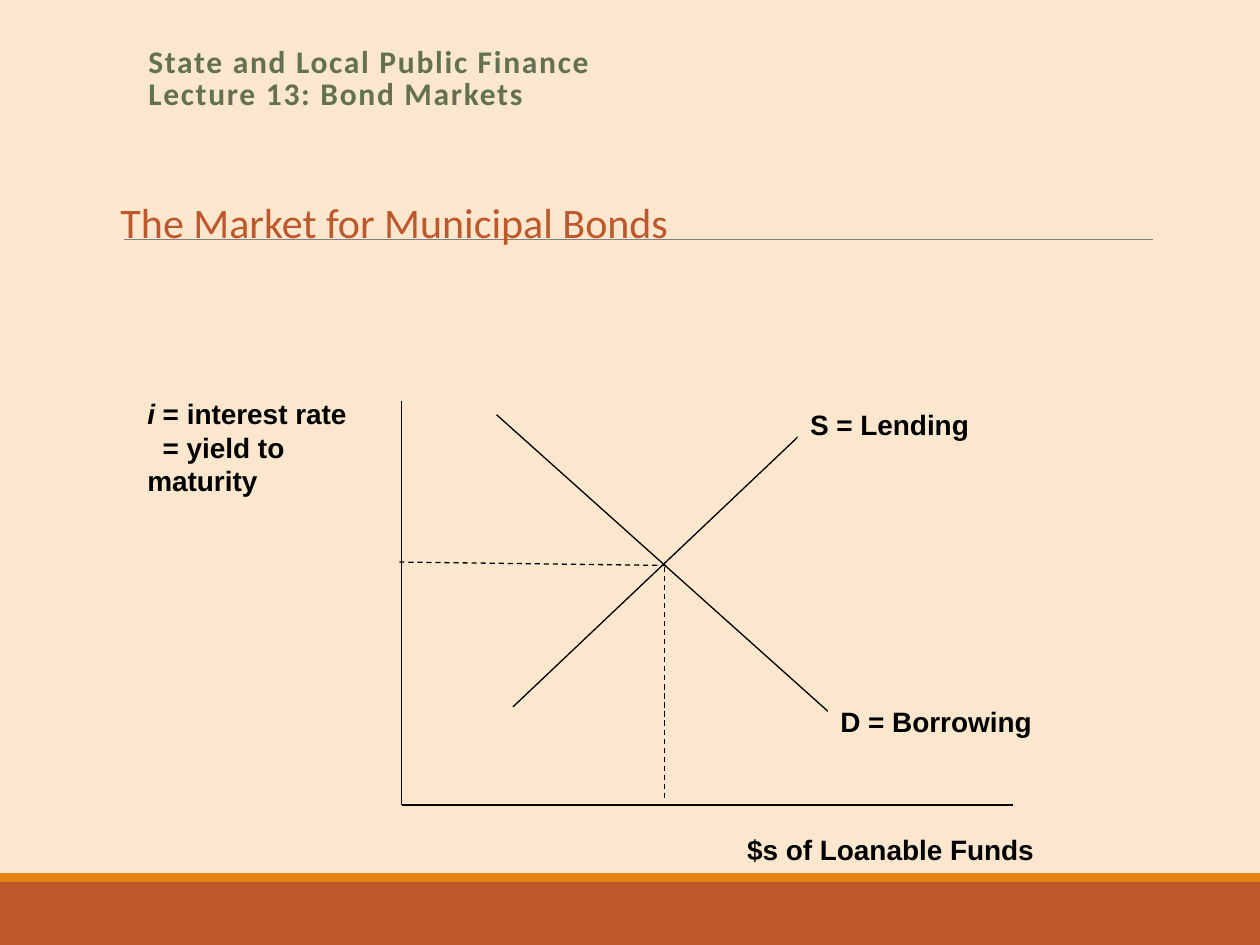
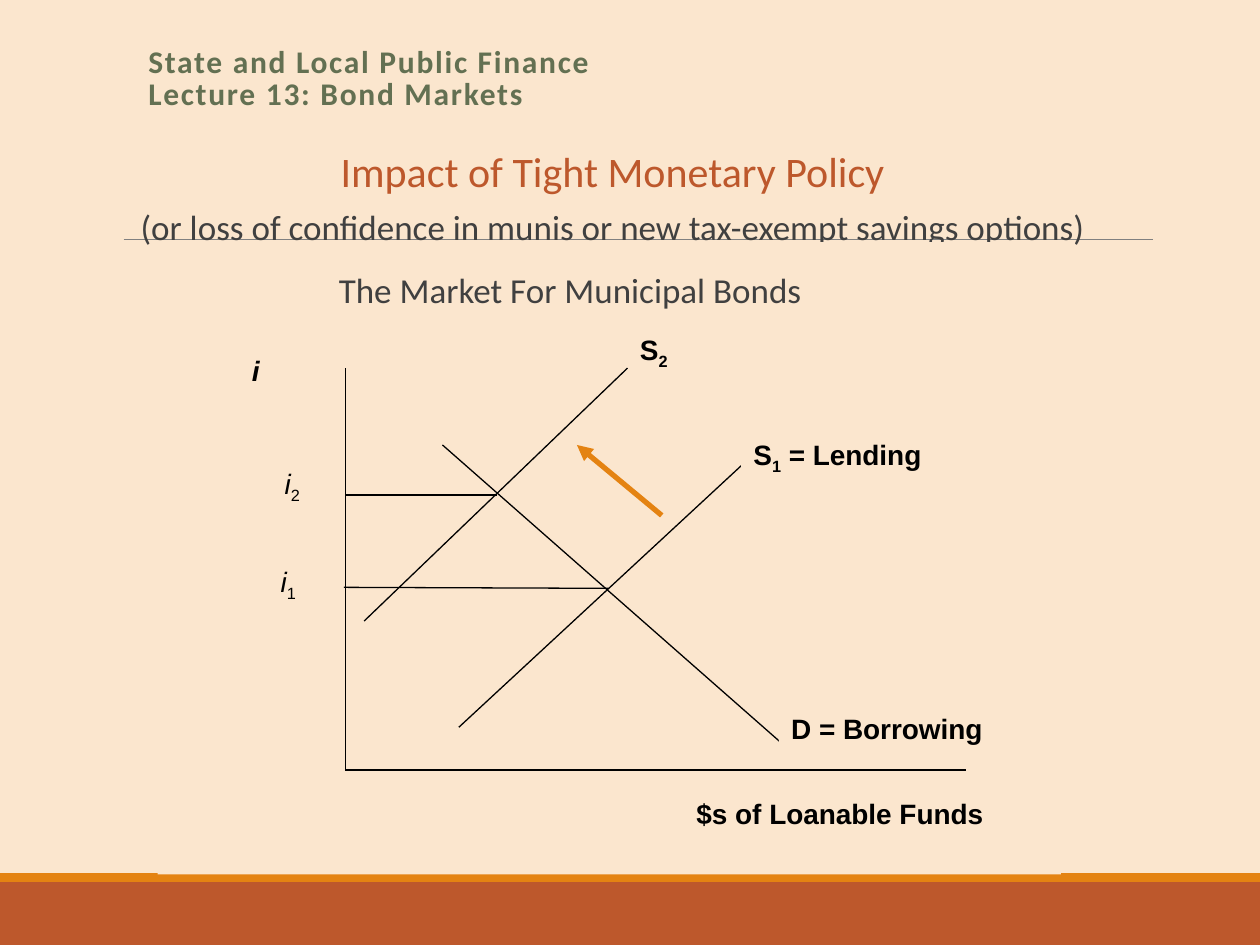
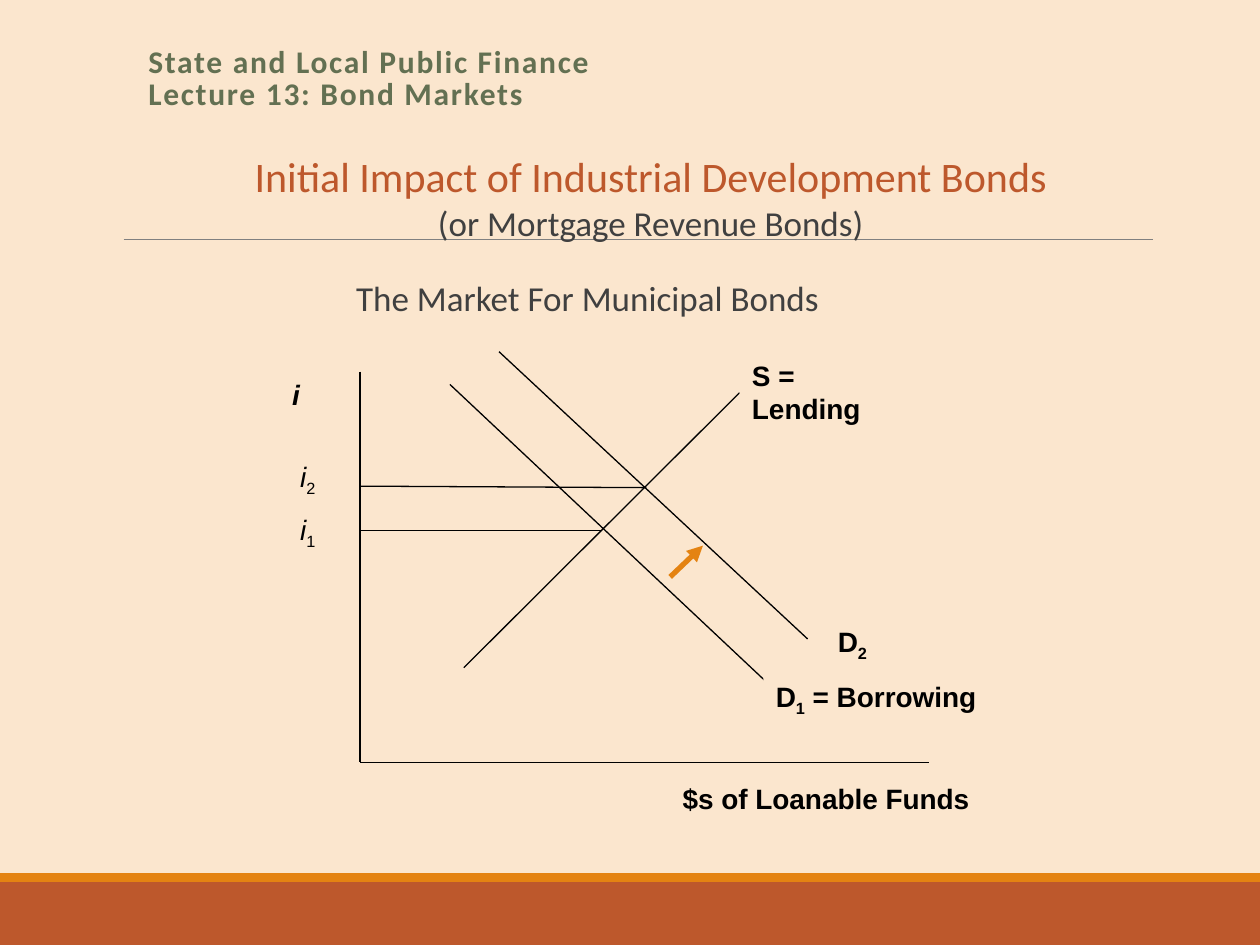
from dataclasses import dataclass
from typing import Any, NamedTuple

from lxml import etree
from pptx import Presentation
from pptx import util as u
from pptx.dml.color import RGBColor
from pptx.enum import dml, shapes, text
from pptx.oxml import ns


@dataclass(frozen=True)
class Theme:
    background: str = "FBE6CE"
    band: str = "BD582C"
    stripe: str = "E48312"
    rule: str = "808080"
    header: str = "637052"
    title: str = "BD582C"
    body: str = "404040"
    ink: str = "000000"
    text_font: str = "Calibri"
    graph_font: str = "Arial"
    title_size: float = 24
    body_size: float = 20
    header_size: float = 18
    label_size: float = 16
    thin: float = 0.5
    curve: float = 0.75
    arrow: float = 3


THEME = Theme()


class Box(NamedTuple):
    left: float
    top: float
    width: float
    height: float


class Point(NamedTuple):
    x: float
    y: float


class Style(NamedTuple):
    font: str
    size: float
    color: str
    bold: bool = False
    spacing: float = 0


class Run(NamedTuple):
    text: str
    italic: bool = False
    subscript: bool = False


class Paragraph(NamedTuple):
    runs: tuple[Run, ...]
    style: Style
    format: dict[str, Any] = {}
    indent: float = 0


class Line(NamedTuple):
    start: Point
    end: Point
    color: str = THEME.ink
    width: float = THEME.curve
    dashed: bool = False
    arrow: bool = False
    joined_label: int | None = None  # index of the label whose left side it meets


class Label(NamedTuple):
    box: Box
    paragraphs: tuple[Paragraph, ...]
    side_margins: tuple[float, float] = (0.25, 0.25)


class Axes(NamedTuple):
    top: float
    corner: Point
    right: float


HEADER = Style(THEME.text_font, THEME.header_size, THEME.header, True, 1)
TITLE = Style(THEME.text_font, THEME.title_size, THEME.title)
BODY = Style(THEME.text_font, THEME.body_size, THEME.body)
BOLD_LABEL = Style(THEME.graph_font, THEME.label_size, THEME.ink, True)
PLAIN_LABEL = BOLD_LABEL._replace(bold=False)


# Formatting helpers
def set_format(target: Any, values: dict[str, Any]) -> None:
    for name, value in values.items():
        setattr(target, name, value)


def rgb(color: str) -> RGBColor:
    return RGBColor.from_string(color)


def write_text(shape: Any, paragraphs: tuple[Paragraph, ...],
               side_margins: tuple[float, float] = (0.25, 0.25), wrap: bool = True) -> None:
    frame = shape.text_frame
    set_format(frame, {
        "word_wrap": wrap, "vertical_anchor": text.MSO_ANCHOR.TOP,
        "margin_left": u.Cm(side_margins[0]), "margin_right": u.Cm(side_margins[1]),
        "margin_top": u.Cm(0.13), "margin_bottom": u.Cm(0.13),
    })
    for index, content in enumerate(paragraphs):
        paragraph = frame.add_paragraph() if index else frame.paragraphs[0]
        set_format(paragraph, {"alignment": text.PP_ALIGN.LEFT} | content.format)
        if content.indent:
            paragraph._p.get_or_add_pPr().set("indent", str(u.Cm(content.indent)))
        style = content.style
        for part in content.runs:
            run = paragraph.add_run()
            run.text = part.text
            set_format(run.font, {"name": style.font, "size": u.Pt(style.size),
                                  "bold": style.bold, "italic": part.italic})
            run.font.color.rgb = rgb(style.color)
            properties = run._r.get_or_add_rPr()
            if part.subscript:
                properties.set("baseline", "-25000")
            if style.spacing:
                properties.set("spc", str(int(style.spacing * 100)))


# Drawing functions
def draw_rectangle(slide: Any, box: Box, color: str) -> Any:
    shape = slide.shapes.add_shape(shapes.MSO_SHAPE.RECTANGLE, *map(u.Cm, box))
    shape.shadow.inherit = False
    shape.fill.solid()
    shape.fill.fore_color.rgb = rgb(color)
    shape.line.fill.background()
    return shape


def draw_text(slide: Any, box: Box, paragraphs: tuple[Paragraph, ...], **options: Any) -> None:
    write_text(slide.shapes.add_textbox(*map(u.Cm, box)), paragraphs, **options)


def draw_line(slide: Any, line: Line) -> Any:
    connector = slide.shapes.add_connector(
        shapes.MSO_CONNECTOR.STRAIGHT, *map(u.Cm, (*line.start, *line.end)))
    connector.line.color.rgb = rgb(line.color)
    connector.line.width = u.Pt(line.width)
    if line.dashed:
        connector.line.dash_style = dml.MSO_LINE.DASH
    if line.arrow:
        etree.SubElement(connector.line._get_or_add_ln(), ns.qn("a:tailEnd"), type="triangle")
    etree.SubElement(connector._element.spPr, ns.qn("a:effectLst"))
    return connector


def draw_label(slide: Any, label: Label) -> Any:
    shape = draw_rectangle(slide, label.box, THEME.background)
    write_text(shape, label.paragraphs, label.side_margins)
    return shape


def draw_graph(slide: Any, axes: Axes, lines: list[Line], labels: list[Label]) -> None:
    corner = axes.corner
    draw_line(slide, Line(Point(corner.x, axes.top), corner))
    draw_line(slide, Line(corner, Point(axes.right, corner.y)))
    connectors = [draw_line(slide, line) for line in lines]
    label_shapes = [draw_label(slide, label) for label in labels]
    for line, connector in zip(lines, connectors):
        if line.joined_label is not None:
            connector.end_connect(label_shapes[line.joined_label], 1)


def add_lecture_slide(presentation: Any) -> Any:
    """Add a slide with the band, stripe, rule and lecture header."""
    slide = presentation.slides.add_slide(presentation.slide_layouts[6])
    slide.background.fill.solid()
    slide.background.fill.fore_color.rgb = rgb(THEME.background)
    draw_rectangle(slide, Box(0, 17.78, 25.4, 1.27), THEME.band)
    draw_rectangle(slide, Box(0, 17.6, 25.4, 0.18), THEME.stripe)
    draw_line(slide, Line(Point(2.49, 4.83), Point(23.24, 4.83), THEME.rule, THEME.thin))
    draw_text(slide, Box(2.74, 0.84, 20.96, 1.65), tuple(
        Paragraph((Run(words),), HEADER, {"line_spacing": 0.85})
        for words in ("State and Local Public Finance", "Lecture 13: Bond Markets")))
    return slide


def draw_titles(slide: Any, box: Box, title: str, subtitle: str, spacing: float) -> None:
    layout = {"alignment": text.PP_ALIGN.CENTER, "line_spacing": spacing,
              "space_before": u.Pt(6.8), "space_after": u.Pt(1.1)}
    draw_text(slide, box, (Paragraph((Run(title),), TITLE, layout),
                           Paragraph((Run(subtitle),), BODY, layout)), side_margins=(0, 0))


# Label builders
def curve_label(box: Box, name: str, number: str = "", meaning: str = "") -> Label:
    runs = (Run(name), Run(number, subscript=True), Run(meaning))
    return Label(box, (Paragraph(tuple(run for run in runs if run.text), BOLD_LABEL),))


def rate_label(left: float, top: float, number: str = "") -> Label:
    runs = (Run("i", italic=True),) + ((Run(number, subscript=True),) if number else ())
    style = PLAIN_LABEL if number else BOLD_LABEL
    return Label(Box(left, top, 1.1, 1.25), (Paragraph(runs, style),), (0, 0))


def funds_label(box: Box) -> Label:
    return curve_label(box, "$s of Loanable Funds")


def caption(box: Box) -> Label:
    return Label(box, (Paragraph((Run("The Market For Municipal Bonds"),), BODY),))


def shift_arrow(start: Point, end: Point) -> Line:
    return Line(start, end, THEME.stripe, THEME.arrow, arrow=True)


# Slides
def add_market_slide(presentation: Any) -> None:
    slide = add_lecture_slide(presentation)
    interest = Label(Box(2.97, 7.87, 5.03, 3.86), (
        Paragraph((Run("i", italic=True), Run(" = interest rate")), BOLD_LABEL),
        Paragraph((Run("= yield to maturity"),), BOLD_LABEL, indent=0.31),
    ), (0, 0))
    draw_graph(slide, Axes(8.08, Point(8.1, 16.23), 20.42), [
        Line(Point(10.01, 8.36), Point(16.87, 14.5)),
        Line(Point(10.34, 14.25), Point(16.21, 8.69)),
        Line(Point(8.05, 11.33), Point(13.51, 11.4), dashed=True),
        Line(Point(13.39, 11.43), Point(13.39, 16.15), dashed=True),
    ], [
        curve_label(Box(16.69, 14.07, 4.47, 1.73), "D = Borrowing"),
        funds_label(Box(14.81, 16.66, 6.35, 0.76)),
        curve_label(Box(16.08, 8.08, 4.47, 1.73), "S = Lending"),
        interest,
    ])
    draw_text(slide, Box(2.18, 3.84, 11.79, 1.27),
              (Paragraph((Run("The Market for Municipal Bonds"),), TITLE),), wrap=False)


def add_tight_policy_slide(presentation: Any) -> None:
    slide = add_lecture_slide(presentation)
    draw_titles(slide, Box(1.63, 2.92, 21.44, 13.89), "Impact of Tight Monetary Policy",
                "(or loss of confidence in munis or new tax-exempt savings options)", 0.9)
    draw_rectangle(slide, Box(3.18, 4.88, 18.21, 12.75), THEME.background)
    draw_graph(slide, Axes(7.42, Point(6.96, 15.52), 19.48), [
        Line(Point(8.92, 8.97), Point(15.88, 15.09)),
        Line(Point(9.25, 14.66), Point(15.21, 9.14)),
        Line(Point(7.34, 12.52), Point(12.65, 7.42)),
        Line(Point(6.93, 11.84), Point(12.27, 11.86)),
        Line(Point(6.96, 9.98), Point(10.01, 9.98)),
        shift_arrow(Point(13.34, 10.39), Point(11.63, 8.97)),
    ], [
        curve_label(Box(15.7, 14.22, 4.55, 1.27), "D = Borrowing"),
        funds_label(Box(13.79, 15.93, 6.45, 1.04)),
        curve_label(Box(14.94, 8.69, 4.55, 1.7), "S", "1", " = Lending"),
        curve_label(Box(12.9, 6.58, 1.52, 1.27), "S", "2")._replace(side_margins=(0, 0.25)),
        rate_label(5.08, 6.99),
        rate_label(5.66, 11.25, "1"),
        rate_label(5.74, 9.27, "2"),
        caption(Box(6.58, 5.28, 12.9, 1.27)),
    ])


def add_development_bonds_slide(presentation: Any) -> None:
    slide = add_lecture_slide(presentation)
    draw_titles(slide, Box(2.54, 3.18, 21.16, 1.7),
                "Initial Impact of Industrial Development Bonds",
                "(or Mortgage Revenue Bonds)", 0.7)
    draw_rectangle(slide, Box(3.81, 5, 16.64, 12.42), THEME.background)
    draw_graph(slide, Axes(7.49, Point(7.26, 15.37), 18.72), [
        Line(Point(9.07, 7.75), Point(15.42, 13.72)),
        Line(Point(10.06, 7.09), Point(16.28, 12.88)),
        Line(Point(9.35, 13.46), Point(14.91, 7.92), joined_label=0),
        Line(Point(7.24, 10.69), Point(12.12, 10.69)),
        Line(Point(7.26, 9.8), Point(13.03, 9.83)),
        shift_arrow(Point(13.51, 11.63), Point(14.17, 11)),
    ], [
        curve_label(Box(14.91, 7.09, 3.58, 1.65), "S = Lending"),
        curve_label(Box(15.39, 13.56, 5.69, 1.5), "D", "1", " = Borrowing"),
        funds_label(Box(13.51, 15.62, 8.08, 1.42)),
        curve_label(Box(16.64, 12.47, 2.41, 1.24), "D", "2"),
        rate_label(5.89, 7.49),
        rate_label(6.05, 9.14, "2"),
        rate_label(6.05, 10.21, "1"),
        caption(Box(6.93, 5.44, 11.79, 1.24)),
    ])


def main() -> None:
    presentation = Presentation()
    set_format(presentation, {"slide_width": u.Cm(25.4), "slide_height": u.Cm(19.05)})
    add_market_slide(presentation)
    add_tight_policy_slide(presentation)
    add_development_bonds_slide(presentation)
    presentation.save("out.pptx")


if __name__ == "__main__":
    main()
